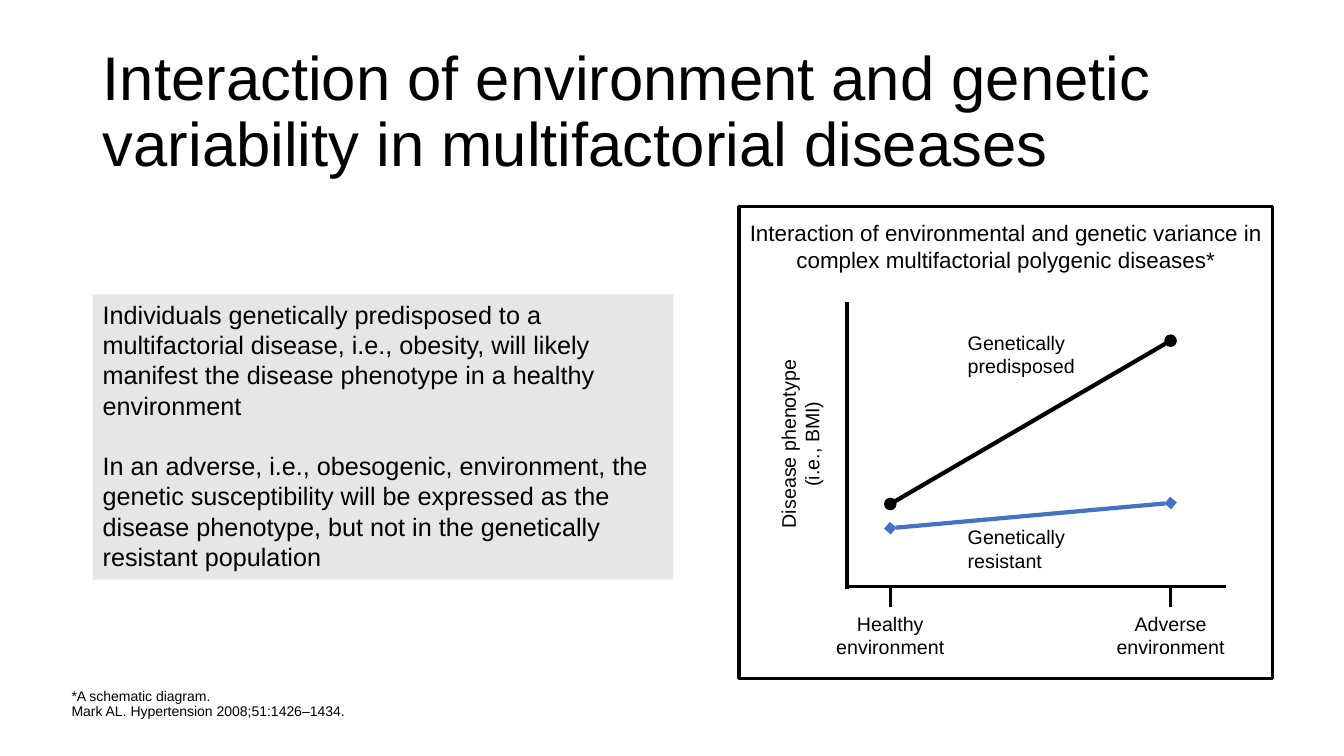
from dataclasses import dataclass

from lxml import etree
from pptx import Presentation
from pptx.dml.color import RGBColor
from pptx.enum.shapes import MSO_CONNECTOR, MSO_SHAPE
from pptx.enum.text import MSO_ANCHOR, MSO_AUTO_SIZE, PP_ALIGN
from pptx.oxml.ns import qn
from pptx.util import Inches, Pt

STRAIGHT = MSO_CONNECTOR.STRAIGHT
RECTANGLE = MSO_SHAPE.RECTANGLE
TOP, MIDDLE, BOTTOM = MSO_ANCHOR.TOP, MSO_ANCHOR.MIDDLE, MSO_ANCHOR.BOTTOM
LEFT, CENTER = PP_ALIGN.LEFT, PP_ALIGN.CENTER
FIXED, GROW = MSO_AUTO_SIZE.NONE, MSO_AUTO_SIZE.SHAPE_TO_FIT_TEXT


@dataclass(frozen=True)
class Theme:
    font: str = "Arial"
    ink: str = "000000"
    panel: str = "E7E6E6"
    resistant: str = "4472C4"
    title: int = 44
    body: int = 18
    heading: int = 16
    label: int = 14
    footnote: int = 10
    axis: float = 2.25
    trend: float = 3


THEME = Theme()

AXIS_X, AXIS_Y, AXIS_TOP, AXIS_END = 8.4, 5.82, 3, 12.16
TICK, LABEL_WIDTH, LABEL_HEIGHT = 0.2, 1.41, 0.57
FRAME = (7.33, 2.05, 5.29, 4.68)
ENVIRONMENTS = [("Healthy environment", 8.83), ("Adverse environment", 11.61)]
# Name, start height, end height, label top, colour, marker
POPULATIONS = [
    ("Genetically predisposed", 5, 3.38, 3.23, THEME.ink, "oval"),
    ("Genetically resistant", 5.24, 4.99, 5.16, THEME.resistant, "diamond"),
]


def place(shape, left, top, width, height):
    shape.left, shape.top = Inches(left), Inches(top)
    shape.width, shape.height = Inches(width), Inches(height)


def write(shape, *texts, size, align=LEFT, anchor=TOP, auto_size=GROW,
          line_spacing=None, gap=0, inset=None):
    """Fill a shape with one paragraph per text; gap is in points."""
    frame = shape.text_frame
    frame.word_wrap = True
    frame.auto_size = auto_size
    frame.vertical_anchor = anchor
    if inset is not None:
        frame.margin_left = frame.margin_right = Inches(inset)
        frame.margin_top = frame.margin_bottom = Inches(inset)
    for index, text in enumerate(texts):
        para = frame.add_paragraph() if index else frame.paragraphs[0]
        para.alignment = align
        para.space_before = Pt(gap if index else 0)
        if line_spacing:
            para.line_spacing = line_spacing
        span = para.add_run()
        span.text = text
        span.font.name = THEME.font
        span.font.size = Pt(size)
        span.font.color.rgb = RGBColor.from_string(THEME.ink)


def remove_bullets(shape):
    for para in shape.text_frame.paragraphs:
        properties = para._p.get_or_add_pPr()
        properties.set("marL", "0")
        properties.set("indent", "0")
        etree.SubElement(properties, qn("a:buNone"))


def add_label(page, text, left, top, width, height=LABEL_HEIGHT,
              size=THEME.label, align=CENTER, rotation=0):
    box = page.shapes.add_textbox(0, 0, 0, 0)
    write(box, text, size=size, align=align)
    place(box, left, top, width, height)
    box.rotation = rotation


def add_box(page, bounds, fill=None, outline=None):
    box = page.shapes.add_shape(RECTANGLE, *map(Inches, bounds))
    box.shadow.inherit = False
    if fill:
        box.fill.solid()
        box.fill.fore_color.rgb = RGBColor.from_string(fill)
    else:
        box.fill.background()
    if outline:
        box.line.color.rgb = RGBColor.from_string(outline)
        box.line.width = Pt(THEME.axis)
    else:
        box.line.fill.background()
    return box


def add_line(page, start, end, color=THEME.ink, width=THEME.axis, marker=None):
    line = page.shapes.add_connector(STRAIGHT, *map(Inches, start + end))
    line.line.color.rgb = RGBColor.from_string(color)
    line.line.width = Pt(width)
    if marker:
        outline = line.line._get_or_add_ln()
        for tag in ("a:headEnd", "a:tailEnd"):
            etree.SubElement(outline, qn(tag), type=marker)
    etree.SubElement(line._element.spPr, qn("a:effectLst"))


def add_placeholders(page):
    title = page.shapes.title
    place(title, 0.92, 0.4, 11.5, 1.45)
    write(title, "Interaction of environment and genetic variability in "
          "multifactorial diseases", size=THEME.title, anchor=MIDDLE,
          auto_size=FIXED, line_spacing=0.9)
    footnote = page.placeholders[1]
    place(footnote, 0.71, 6.79, 9.46, 0.35)
    write(footnote, "*A schematic diagram.",
          "Mark AL. Hypertension 2008;51:1426–1434.", size=THEME.footnote,
          anchor=BOTTOM, auto_size=FIXED, line_spacing=0.9, inset=0)
    remove_bullets(footnote)


def add_summary(page):
    panel = add_box(page, (0.92, 2.92, 5.76, 2.83), fill=THEME.panel)
    write(panel,
          "Individuals genetically predisposed to a multifactorial disease, "
          "i.e., obesity, will likely manifest the disease phenotype in a "
          "healthy environment",
          "In an adverse, i.e., obesogenic, environment, the genetic "
          "susceptibility will be expressed as the disease phenotype, but not "
          "in the genetically resistant population",
          size=THEME.body, gap=21.6)


def add_diagram(page):
    healthy_x, adverse_x = (x for _, x in ENVIRONMENTS)
    for name, start, end, label_top, color, marker in POPULATIONS:
        add_line(page, (healthy_x, start), (adverse_x, end), color,
                 THEME.trend, marker)
        add_label(page, name, 9.5, label_top, 1.27, align=LEFT)
    add_line(page, (AXIS_X, AXIS_TOP), (AXIS_X, AXIS_Y + 0.02))
    add_line(page, (AXIS_X, AXIS_Y), (AXIS_END, AXIS_Y))
    for name, x in ENVIRONMENTS:
        add_line(page, (x, AXIS_Y), (x, AXIS_Y + TICK))
        add_label(page, name, x - LABEL_WIDTH / 2, AXIS_Y + TICK, LABEL_WIDTH)
    add_label(page, "Disease phenotype (i.e., BMI)", 6.79, 4.12, 2.29,
              rotation=270)
    add_box(page, FRAME, outline=THEME.ink)
    add_label(page, "Interaction of environmental and genetic variance in "
              "complex multifactorial polygenic diseases*",
              FRAME[0], 2.13, FRAME[2], 0.64, size=THEME.heading)


def main():
    deck = Presentation()
    deck.slide_width, deck.slide_height = Inches(13.33), Inches(7.5)
    page = deck.slides.add_slide(deck.slide_layouts[1])
    add_placeholders(page)
    add_summary(page)
    add_diagram(page)
    deck.save("out.pptx")


if __name__ == "__main__":
    main()
